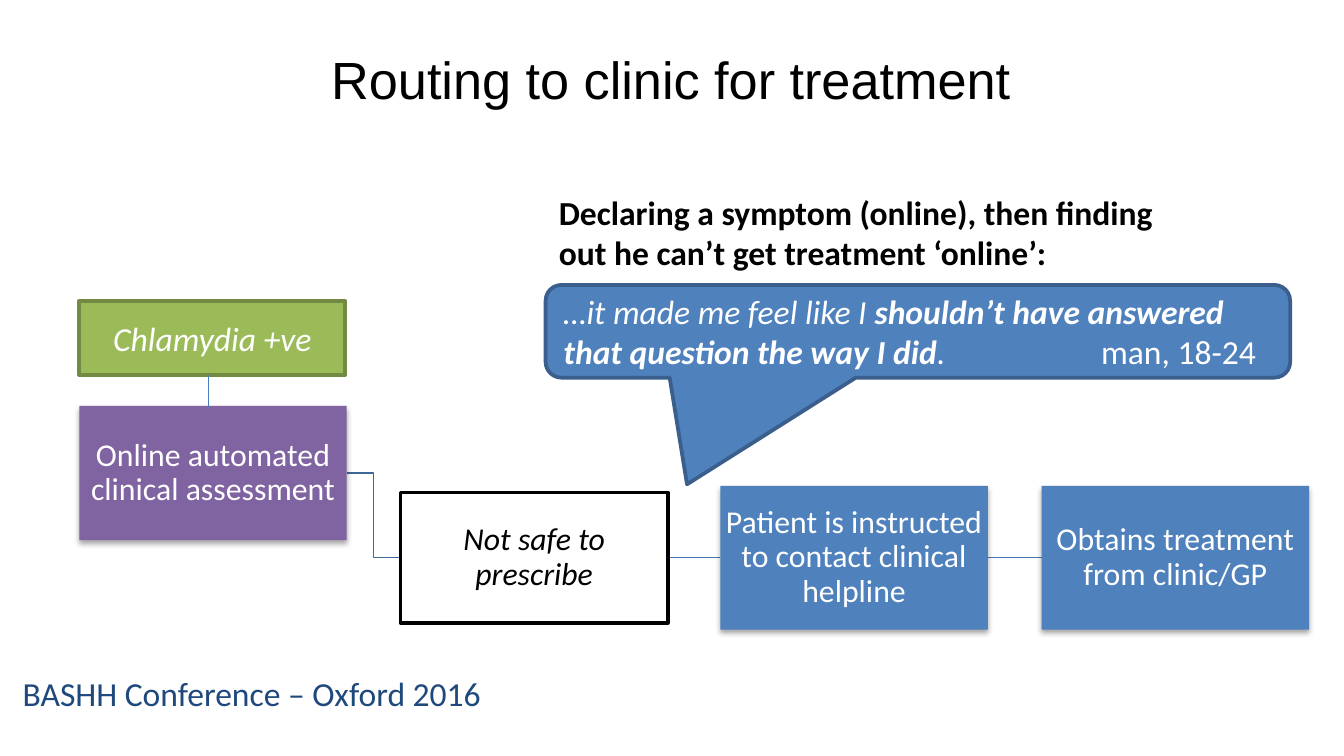
from lxml import etree
from pptx import Presentation
from pptx.dml import color
from pptx.enum import shapes, text
from pptx.oxml import ns
from pptx.util import Inches, Pt

BOX_W = 1.99
FLOW_Y = 4.15
FLOW = [
    ("Not safe to prescribe", 2.98, 0.97, "FFFFFF", "000000"),
    ("Patient is instructed to contact clinical helpline", 5.36, 1.07, "4F81BD", None),
    ("Obtains treatment from clinic/GP", 7.75, 1.07, "4F81BD", None),
]


def rgb(value):
    return color.RGBColor.from_string(value)


def child(parent, tag, **attrs):
    el = etree.SubElement(parent, ns.qn(tag))
    for name, value in attrs.items():
        el.set(name, str(value))
    return el


def style(p, size, hue, font="Calibri", bold=False, italic=False):
    for r in p.runs:
        r.font.name, r.font.size = font, Pt(size)
        r.font.bold, r.font.italic = bold, italic
        r.font.color.rgb = rgb(hue)


def add_shadow(sp):
    effects = sp._element.spPr.find(ns.qn("a:effectLst"))
    shadow = child(effects, "a:outerShdw", blurRad=Pt(3.1), dist=Pt(1.8),
                   dir=5400000, rotWithShape=0)
    child(child(shadow, "a:srgbClr", val="000000"), "a:alpha", val=35000)


def add_block(s, kind, at, fill, line=None):
    sp = s.shapes.add_shape(kind, *map(Inches, at))
    sp.shadow.inherit = False
    sp.fill.solid()
    sp.fill.fore_color.rgb = rgb(fill)
    if line:
        sp.line.color.rgb = rgb(line)
        sp.line.width = Pt(2)
    else:
        sp.line.fill.background()
        add_shadow(sp)
    sp.text_frame.vertical_anchor = text.MSO_ANCHOR.MIDDLE
    return sp


def add_box(s, words, at, fill, line=None, size=17, hue="FFFFFF", italic=False, spacing=0.9):
    tf = add_block(s, shapes.MSO_SHAPE.RECTANGLE, at, fill, line).text_frame
    tf.margin_left = tf.margin_right = tf.margin_top = tf.margin_bottom = Inches(0.01)
    tf.text = words
    p = tf.paragraphs[0]
    p.alignment = text.PP_ALIGN.CENTER
    p.line_spacing = spacing
    style(p, size, hue, italic=italic)


def add_label(s, words, at, hue, bold=False):
    tf = s.shapes.add_textbox(*map(Inches, at)).text_frame
    tf.word_wrap = True
    tf.text = words
    style(tf.paragraphs[0], 18, hue, bold=bold)


def add_link(s, start, end, hue, kind=shapes.MSO_CONNECTOR.STRAIGHT):
    link = s.shapes.add_connector(kind, *map(Inches, start + end))
    link.line.color.rgb = rgb(hue)
    link.line.width = Pt(0.75)
    child(link._element.spPr, "a:effectLst")


def add_quote(s):
    sp = add_block(s, shapes.MSO_SHAPE.ROUNDED_RECTANGULAR_CALLOUT,
                   (4.06, 2.12, 5.54, 0.69), "4F81BD", "3A5F8C")
    for i, value in enumerate((-0.31, 1.65, 0.17)):
        sp.adjustments[i] = value
    p = sp.text_frame.paragraphs[0]
    p.alignment = text.PP_ALIGN.LEFT
    tabs = child(p._p.get_or_add_pPr(), "a:tabLst")
    child(tabs, "a:tab", pos=Inches(4), algn="l")
    parts = [
        ("…it made me feel like I ", False, True),
        ("shouldn’t have answered that question the way I did", True, True),
        (".", False, True),
        ("\tman, 18-24", False, False),
    ]
    for words, _, _ in parts:
        p.add_run().text = words
    style(p, 18, "FFFFFF")
    for r, (_, bold, italic) in zip(p.runs, parts):
        r.font.bold, r.font.italic = bold, italic


def add_title(s, words):
    sp = s.shapes.title
    sp.left, sp.top, sp.width, sp.height = map(Inches, (0.49, 0.2, 9, 0.77))
    tf = sp.text_frame
    tf.text = words
    tf.vertical_anchor = text.MSO_ANCHOR.MIDDLE
    tf.paragraphs[0].alignment = text.PP_ALIGN.CENTER
    style(tf.paragraphs[0], 28, "000000", "Arial")


def add_flow(s):
    add_link(s, (2.58, 3.52), (FLOW[0][1], FLOW_Y), "3F6797", shapes.MSO_CONNECTOR.ELBOW)
    for left, right in zip(FLOW, FLOW[1:]):
        add_link(s, (left[1] + BOX_W, FLOW_Y), (right[1], FLOW_Y), "4875AC")
    for words, x, height, fill, line in FLOW:
        add_box(s, words, (x, FLOW_Y - height / 2, BOX_W, height), fill, line,
                hue=line or "FFFFFF", italic=bool(line))


def main():
    prs = Presentation()
    prs.slide_width = Inches(10)
    prs.slide_height = prs.slide_width * 9 // 16
    s = prs.slides.add_slide(prs.slide_layouts[5])
    add_title(s, "Routing to clinic for treatment")
    add_label(s, "BASHH Conference – Oxford 2016", (0.07, 4.96, 4.78, 0.69), "1F497D")
    add_flow(s)
    add_box(s, "Online automated clinical assessment", (0.59, 3.02, BOX_W, 1), "8064A2")
    add_quote(s)
    add_box(s, "Chlamydia +ve", (0.59, 2.24, 1.98, 0.55), "9BBB59", "738A42",
            size=18, italic=True, spacing=1.0)
    add_link(s, (1.55, 2.79), (1.55, 3.03), "4B7EBC")
    add_label(s, "Declaring a symptom (online), then finding out he can’t get treatment ‘online’:",
              (4.06, 1.38, 4.9, 0.71), "000000", bold=True)
    prs.save("out.pptx")


if __name__ == "__main__":
    main()
